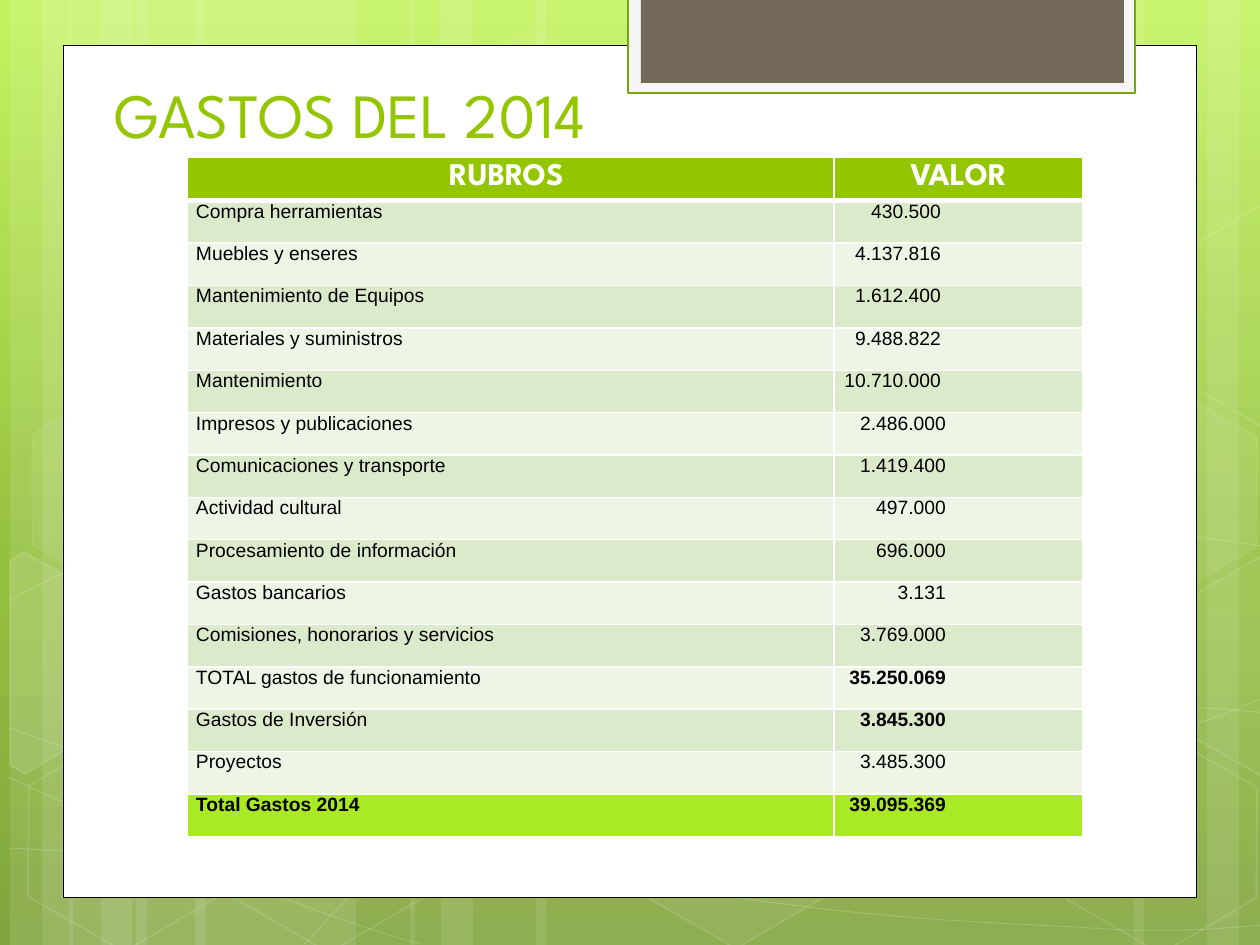
import pptx
import pptx.dml.color
import pptx.enum.shapes
import pptx.enum.text
import pptx.oxml
import pptx.oxml.ns
import pptx.util

PX = 914400 // 126
COLORS = {
    "white": "FFFFFF", "black": "000000", "green": "94C600", "frame": "F5F5F5",
    "frame_line": "74A510", "taupe": "71685A", "band_dark": "DCEACC",
    "band_light": "EEF5E7", "total": "AAEA25",
    "sky_top": "C3F35F", "sky_middle": "93BF3F", "sky_bottom": "81A53E",
}
SHAPES = pptx.enum.shapes.MSO_SHAPE
ALIGN = pptx.enum.text.PP_ALIGN
qn = pptx.oxml.ns.qn
nsdecls = pptx.oxml.ns.nsdecls


def paint(shape, fill=None, fill_alpha=100, line=None, width=1, line_alpha=100):
    """Set fill and outline; alphas are percentages of opacity."""
    shape.shadow.inherit = False
    for target, color, alpha, route in (
            (shape.fill, fill, fill_alpha, "a:solidFill"),
            (shape.line.fill, line, line_alpha, "a:ln/a:solidFill")):
        if color is None or alpha == 0:
            target.background()
            continue
        target.solid()
        target.fore_color.rgb = pptx.dml.color.RGBColor.from_string(COLORS[color])
        if alpha < 100:
            tint = shape.element.spPr.xpath(route + "/a:srgbClr")[0]
            tint.append(pptx.oxml.parse_xml(
                f'<a:alpha {nsdecls("a")} val="{alpha * 1000}"/>'))
    if line:
        shape.line.width = pptx.util.Pt(width)


def write(frame, text, size=11, font="Arial", color="black", bold=False, align=ALIGN.LEFT):
    para = frame.paragraphs[0]
    para.alignment = align
    span = para.add_run()
    span.text = text
    span.font.size = pptx.util.Pt(size)
    span.font.name = font
    span.font.bold = bold
    span.font.color.rgb = pptx.dml.color.RGBColor.from_string(COLORS[color])


deck = pptx.Presentation()
deck.slide_width, deck.slide_height = pptx.util.Inches(10), pptx.util.Inches(7.5)
page = deck.slides.add_slide(deck.slide_layouts[6])

# Background gradient
backdrop = page.background.fill
backdrop.gradient()
backdrop.gradient_angle = 270
stops = page.element.find(".//" + qn("a:gsLst"))
for stop in list(stops):
    stops.remove(stop)
for position, name in ((0, "sky_top"), (62, "sky_middle"), (100, "sky_bottom")):
    stops.append(pptx.oxml.parse_xml(
        f'<a:gs {nsdecls("a")} pos="{position * 1000}"><a:srgbClr val="{COLORS[name]}"/></a:gs>'))

# Translucent vertical bands
for left, width in ((136, 220), (10, 63), (42, 105), (195, 220), (69, 63), (101, 105),
                    (924, 220), (1207, 63), (1134, 105), (536, 388), (410, 63), (441, 105)):
    band = page.shapes.add_shape(SHAPES.RECTANGLE, left * PX, 0, width * PX, 945 * PX)
    paint(band, fill="white", fill_alpha=10)

# Thin curves: a start point, then two controls and an end for each cubic segment
curves = [
    [(9, 848), (77, 852), (145, 856), (239, 854), (334, 853), (451, 851), (577, 838),
     (703, 825), (882, 801), (998, 777), (1113, 753), (1231, 716), (1269, 694)],
    [(9, 601), (45, 581), (82, 562), (152, 543), (224, 524), (326, 496), (437, 488),
     (549, 479), (685, 478), (824, 488), (963, 498), (1193, 537), (1269, 547)],
    [(8, 777), (160, 847), (311, 916), (421, 944)],
    [(9, 728), (48, 742), (88, 756), (161, 776), (234, 795), (344, 827), (450, 848),
     (554, 869), (687, 892), (791, 905), (896, 919), (1008, 924), (1075, 927),
     (1140, 932), (1158, 930), (1191, 930), (1223, 929), (1246, 926), (1269, 925)],
    [(305, 944), (328, 919), (350, 893), (381, 871), (411, 848), (454, 823), (489, 805),
     (524, 788), (546, 780), (592, 767), (638, 755), (722, 737), (766, 728),
     (811, 719), (818, 719), (857, 717), (896, 713), (958, 709), (1000, 708),
     (1044, 707), (1116, 708), (1116, 708), (1116, 708), (1201, 708), (1201, 708),
     (1223, 709), (1245, 711), (1256, 712), (1268, 713), (1264, 712), (1268, 713)],
]
for start, *points in curves:
    builder = page.shapes.build_freeform(*start, scale=PX)
    builder.add_line_segments(points, close=False)
    curve = builder.convert_to_shape()
    steps = curve.element.findall(".//" + qn("a:lnTo"))
    outline = steps[0].getparent()
    for i in range(0, len(steps), 3):
        cubic = pptx.oxml.parse_xml(f'<a:cubicBezTo {nsdecls("a")}/>')
        for step in steps[i:i + 3]:
            cubic.append(step[0])
            outline.remove(step)
        outline.append(cubic)
    paint(curve, line="white", width=0.5, line_alpha=20)

# Whole hexagons, then those cut by the slide edge
for left, top, fill_alpha, line_alpha in (
        (421, 45, 4, 8), (626, 742, 6, 12), (14, 745, 0, 12), (18, 393, 7, 8),
        (219, 746, 0, 12), (949, 571, 10, 12), (1051, 747, 0, 12), (1051, 396, 7, 8)):
    hexagon = page.shapes.add_shape(SHAPES.HEXAGON, left * PX, top * PX, 220 * PX, 192 * PX)
    hexagon.adjustments[0] = 0.285
    hexagon.rotation = 30
    paint(hexagon, "white", fill_alpha, "white", 1, line_alpha)

for fill_alpha, corners in (
        (10, [(10, 561), (24, 552), (121, 607), (120, 718), (25, 774), (10, 765)]),
        (4, [(1167, 611), (1261, 556), (1271, 562), (1271, 772), (1263, 777), (1167, 722)]),
        (0, [(1167, 261), (1261, 205), (1273, 212), (1271, 422), (1263, 427), (1167, 372)])):
    builder = page.shapes.build_freeform(*corners[0], scale=PX)
    builder.add_line_segments(corners[1:], close=True)
    paint(builder.convert_to_shape(), "white", fill_alpha, "white", 1, 12)

# White panel and the framed tab at the top
for left, top, width, height, fill, line, weight in (
        (63, 45, 1134, 853, "white", "black", 0.5),
        (628, -2, 507, 95, "frame", "frame_line", 1.25),
        (641, -2, 483, 85, "taupe", None, 0)):
    panel = page.shapes.add_shape(SHAPES.RECTANGLE, left * PX, top * PX, width * PX, height * PX)
    paint(panel, fill=fill, line=line, width=weight)

# Title
title = page.shapes.add_textbox(100 * PX, 75 * PX, 500 * PX, 72 * PX).text_frame
title.word_wrap = True
title.margin_left = title.margin_right = title.margin_top = title.margin_bottom = 0
write(title, "GASTOS DEL 2014", size=36, font="League Spartan", color="green",
      align=ALIGN.CENTER)

# Expense table
expenses = [
    ("RUBROS ", "VALOR"),
    ("Compra herramientas", "430.500"),
    ("Muebles y enseres", "4.137.816"),
    ("Mantenimiento de Equipos", "1.612.400"),
    ("Materiales y suministros", "9.488.822"),
    ("Mantenimiento", "10.710.000"),
    ("Impresos y publicaciones", "2.486.000"),
    ("Comunicaciones y transporte", "1.419.400"),
    ("Actividad cultural", "497.000"),
    ("Procesamiento de información", "696.000"),
    ("Gastos bancarios", "3.131"),
    ("Comisiones, honorarios y servicios", "3.769.000"),
    ("TOTAL gastos de funcionamiento", "35.250.069"),
    ("Gastos de Inversión", "3.845.300"),
    ("Proyectos", "3.485.300"),
    ("Total Gastos 2014", "39.095.369"),
]
last = len(expenses) - 1
bold_cells = {(12, 1), (13, 1), (last, 0), (last, 1)}
table = page.shapes.add_table(len(expenses), 2, 187 * PX, 157 * PX, 896 * PX, 678 * PX).table
table.columns[0].width, table.columns[1].width = 647 * PX, 249 * PX
for r, entries in enumerate(expenses):
    table.rows[r].height = 678 * PX // len(expenses)
    for c, text in enumerate(entries):
        cell = table.cell(r, c)
        for side in "LRTB":
            thick = (r == 0 and side == "B") or (r == 1 and side == "T")
            cell._tc.get_or_add_tcPr().append(pptx.oxml.parse_xml(
                f'<a:ln{side} {nsdecls("a")} w="{38100 if thick else 12700}"><a:solidFill>'
                f'<a:srgbClr val="{COLORS["white"]}"/></a:solidFill></a:ln{side}>'))
        fill = ("green" if r == 0 else "total" if r == last
                else "band_dark" if r % 2 else "band_light")
        cell.fill.solid()
        cell.fill.fore_color.rgb = pptx.dml.color.RGBColor.from_string(COLORS[fill])
        cell.margin_bottom = 0
        if r == 0:
            cell.margin_top = 6 * PX
            write(cell.text_frame, text, size=18, font="League Spartan", color="white",
                  bold=True, align=ALIGN.CENTER)
            continue
        cell.margin_left = 9 * PX
        cell.margin_top = 0
        cell.margin_right = 9 * PX if c == 0 else (142 if r <= 5 else 137) * PX
        write(cell.text_frame, text, bold=(r, c) in bold_cells,
              align=ALIGN.RIGHT if c else ALIGN.LEFT)

deck.save("out.pptx")
